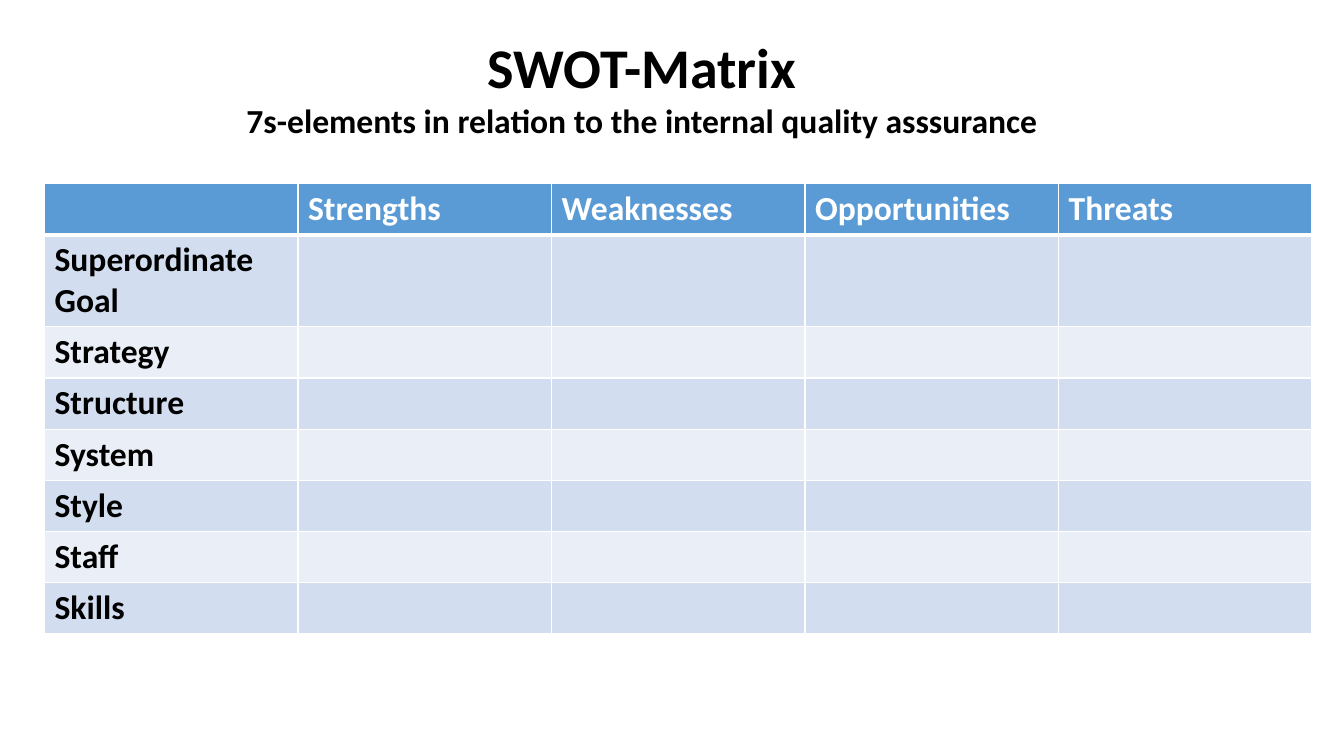
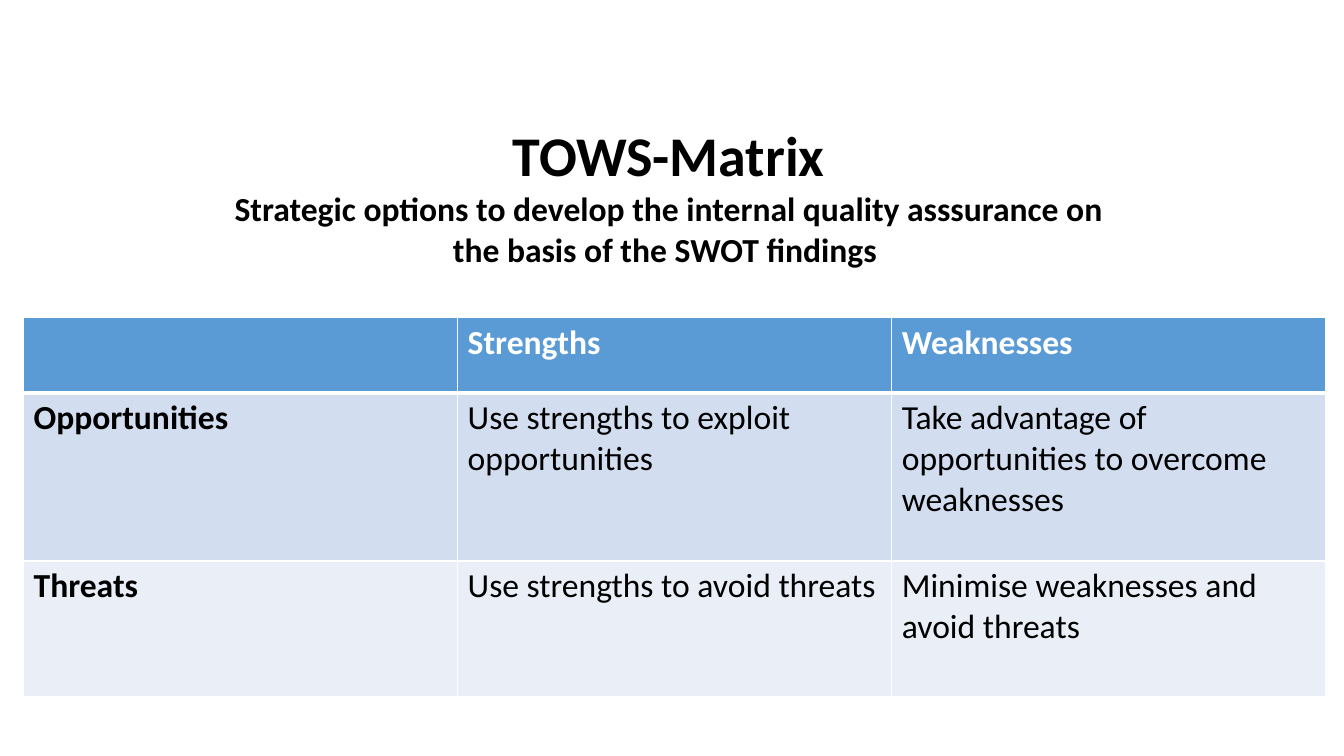
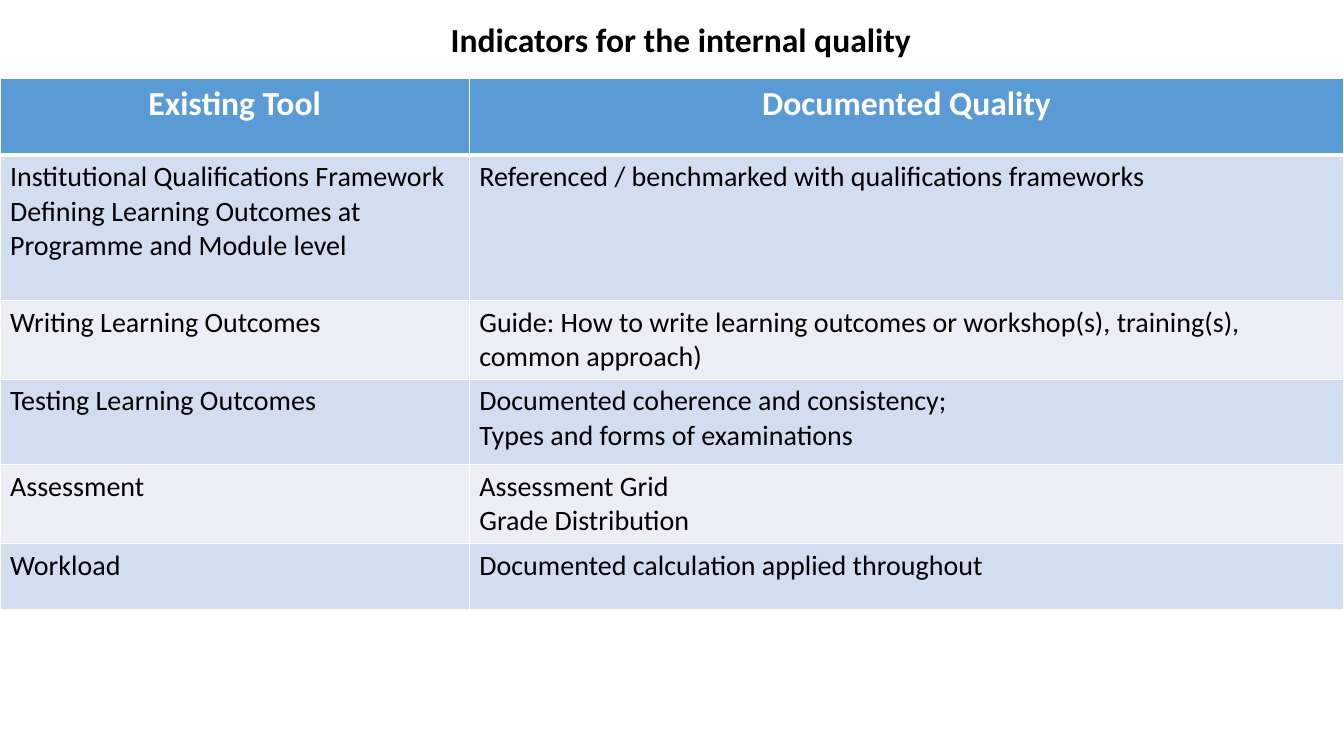
from dataclasses import dataclass

from lxml.etree import SubElement
from pptx import Presentation
from pptx.dml.color import RGBColor
from pptx.enum.text import MSO_ANCHOR, MSO_AUTO_SIZE, PP_ALIGN
from pptx.oxml.ns import qn
from pptx.slide import Slide
from pptx.table import _Cell
from pptx.text.text import TextFrame
from pptx.util import Pt


@dataclass(frozen=True)
class Theme:
    font: str = "Calibri"
    text: str = "000000"
    white: str = "FFFFFF"
    header: str = "5B9BD5"
    bands: tuple[str, str] = ("D2DEEF", "EAEFF7")
    title_size: float = 40
    heading_size: float = 24
    detail_size: float = 20
    rule: float = 1
    header_rule: float = 3


THEME = Theme()


@dataclass(frozen=True)
class Box:
    left: float
    top: float
    width: float
    height: float


@dataclass(frozen=True)
class Line:
    text: str
    size: float


@dataclass(frozen=True)
class Matrix:
    left: float
    top: float
    columns: list[float]
    heights: list[float]
    rows: list[list[str]]
    body_size: float = THEME.heading_size
    header_align: PP_ALIGN = PP_ALIGN.LEFT
    bold_row_heads: bool = True


@dataclass(frozen=True)
class Page:
    title_box: Box
    title: list[Line]
    matrix: Matrix


PAGES = [
    Page(
        Box(132.5, 19.5, 652.3, 85),
        [
            Line("SWOT-Matrix", THEME.title_size),
            Line("7s-elements in relation to the internal quality asssurance", THEME.heading_size),
        ],
        Matrix(
            left=31.8,
            top=131.2,
            columns=[181.1] * 5,
            heights=[36, 64] + [36] * 6,
            rows=[
                ["", "Strengths", "Weaknesses", "Opportunities", "Threats"],
                *(
                    [element, "", "", "", ""]
                    for element in (
                        "Superordinate\nGoal", "Strategy", "Structure", "System",
                        "Style", "Staff", "Skills",
                    )
                ),
            ],
        ),
    ),
    Page(
        Box(157.7, 82.8, 640, 113.8),
        [
            Line("TOWS-Matrix", THEME.title_size),
            Line(
                "Strategic options to develop the internal quality asssurance on "
                "the basis of the SWOT findings ",
                THEME.heading_size,
            ),
        ],
        Matrix(
            left=16.8,
            top=227,
            columns=[310.1] * 3,
            heights=[53.7, 120, 97],
            rows=[
                ["", "Strengths", "Weaknesses"],
                [
                    "Opportunities",
                    "Use strengths to exploit opportunities",
                    "Take advantage of opportunities to overcome weaknesses",
                ],
                [
                    "Threats",
                    "Use strengths to avoid threats",
                    "Minimise weaknesses and avoid threats",
                ],
            ],
        ),
    ),
    Page(
        Box(164.2, 10.1, 644.4, 36),
        [Line("Indicators for the internal quality", THEME.heading_size)],
        Matrix(
            left=0,
            top=56.2,
            columns=[335.2, 624.8],
            heights=[54.7, 103.7, 55, 61.2, 55, 47.5],
            rows=[
                ["Existing Tool", "Documented Quality"],
                [
                    "Institutional Qualifications Framework\n"
                    "Defining Learning Outcomes at Programme and Module level",
                    "Referenced / benchmarked with qualifications frameworks",
                ],
                [
                    "Writing Learning Outcomes",
                    "Guide: How to write learning outcomes or workshop(s), "
                    "training(s), common approach)",
                ],
                [
                    "Testing Learning Outcomes",
                    "Documented coherence and consistency;\nTypes and forms of examinations",
                ],
                ["Assessment", "Assessment Grid\nGrade Distribution"],
                ["Workload", "Documented calculation applied throughout"],
            ],
            body_size=THEME.detail_size,
            header_align=PP_ALIGN.CENTER,
            bold_row_heads=False,
        ),
    ),
]


def write_lines(
    frame: TextFrame, lines: list[Line], color: str, bold: bool, align: PP_ALIGN
) -> None:
    for index, line in enumerate(lines):
        paragraph = frame.add_paragraph() if index else frame.paragraphs[0]
        paragraph.alignment = align
        run = paragraph.add_run()
        run.text = line.text
        run.font.name = THEME.font
        run.font.size = Pt(line.size)
        run.font.bold = bold
        run.font.color.rgb = RGBColor.from_string(color)


def add_title(slide: Slide, box: Box, lines: list[Line]) -> None:
    title = slide.shapes.title
    title.left, title.top = Pt(box.left), Pt(box.top)
    title.width, title.height = Pt(box.width), Pt(box.height)
    frame = title.text_frame
    frame.word_wrap = True
    frame.auto_size = MSO_AUTO_SIZE.NONE
    frame.vertical_anchor = MSO_ANCHOR.TOP
    write_lines(frame, lines, THEME.text, True, PP_ALIGN.CENTER)


def set_borders(cell: _Cell, top: float, bottom: float) -> None:
    properties = cell._tc.get_or_add_tcPr()
    widths = {"a:lnL": THEME.rule, "a:lnR": THEME.rule, "a:lnT": top, "a:lnB": bottom}
    for side, width in widths.items():
        border = SubElement(properties, qn(side), w=str(Pt(width)))
        fill = SubElement(border, qn("a:solidFill"))
        SubElement(fill, qn("a:srgbClr"), val=THEME.white)


def add_matrix(slide: Slide, matrix: Matrix) -> None:
    table = slide.shapes.add_table(
        len(matrix.rows), len(matrix.columns),
        Pt(matrix.left), Pt(matrix.top),
        Pt(sum(matrix.columns)), Pt(sum(matrix.heights)),
    ).table
    for column, width in zip(table.columns, matrix.columns):
        column.width = Pt(width)
    for row, height in zip(table.rows, matrix.heights):
        row.height = Pt(height)

    for row_index, texts in enumerate(matrix.rows):
        is_header = row_index == 0
        background = THEME.header if is_header else THEME.bands[(row_index - 1) % 2]
        color = THEME.white if is_header else THEME.text
        size = THEME.heading_size if is_header else matrix.body_size
        align = matrix.header_align if is_header else PP_ALIGN.LEFT
        for column_index, text in enumerate(texts):
            cell = table.cell(row_index, column_index)
            set_borders(
                cell,
                top=THEME.header_rule if row_index == 1 else THEME.rule,
                bottom=THEME.header_rule if is_header else THEME.rule,
            )
            cell.fill.solid()
            cell.fill.fore_color.rgb = RGBColor.from_string(background)
            if text:
                bold = is_header or (matrix.bold_row_heads and column_index == 0)
                lines = [Line(part, size) for part in text.split("\n")]
                write_lines(cell.text_frame, lines, color, bold, align)


def main() -> None:
    presentation = Presentation()
    presentation.slide_width, presentation.slide_height = Pt(960), Pt(540)
    title_only = presentation.slide_layouts.get_by_name("Title Only")
    for page in PAGES:
        slide = presentation.slides.add_slide(title_only)
        add_title(slide, page.title_box, page.title)
        add_matrix(slide, page.matrix)
    presentation.save("out.pptx")


if __name__ == "__main__":
    main()
